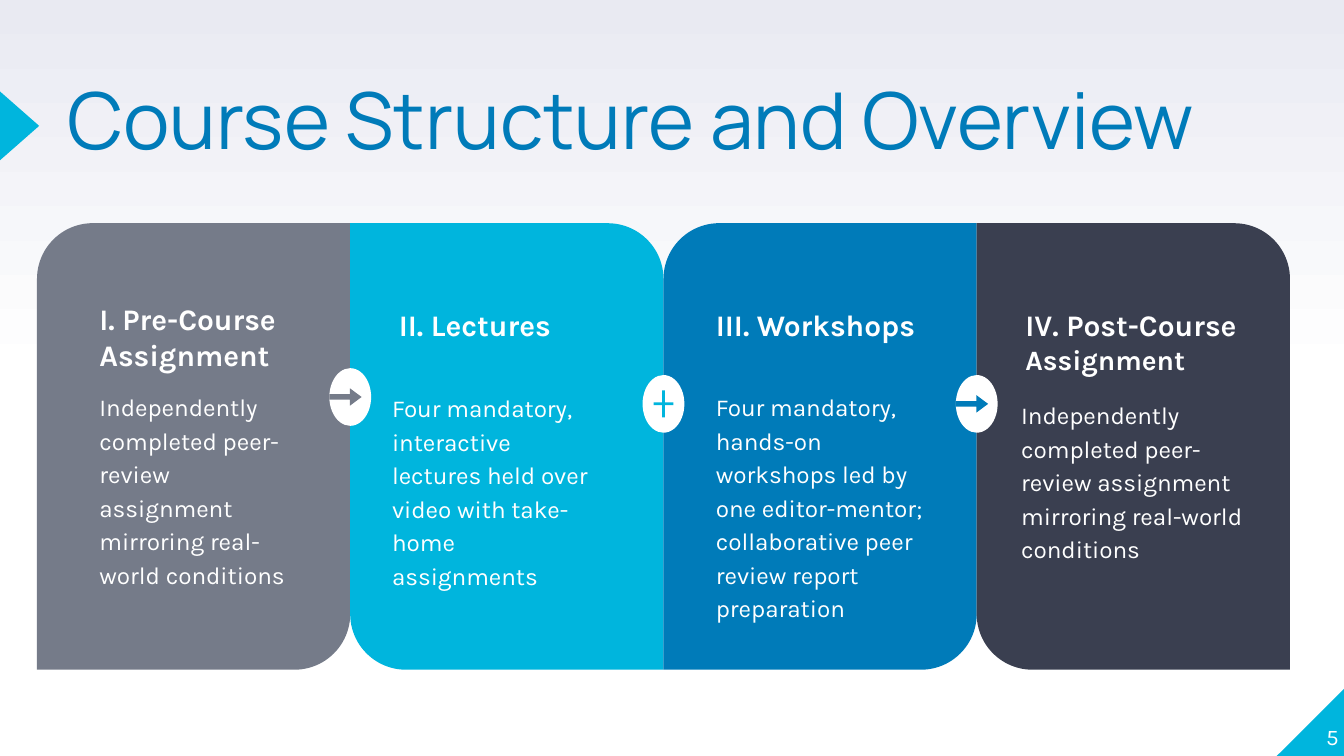
from dataclasses import dataclass

from pptx import Presentation
from pptx.dml.color import RGBColor
from pptx.enum.shapes import MSO_SHAPE
from pptx.enum.text import MSO_ANCHOR, PP_ALIGN
from pptx.util import Cm, Pt

PANEL = MSO_SHAPE.ROUND_2_DIAG_RECTANGLE
OVAL = MSO_SHAPE.OVAL
ARROW = MSO_SHAPE.RIGHT_ARROW
PLUS = MSO_SHAPE.MATH_PLUS
TRIANGLE = MSO_SHAPE.ISOSCELES_TRIANGLE
CORNER = MSO_SHAPE.RIGHT_TRIANGLE
TOP, BOTTOM = MSO_ANCHOR.TOP, MSO_ANCHOR.BOTTOM
LEFT, RIGHT = PP_ALIGN.LEFT, PP_ALIGN.RIGHT


@dataclass(frozen=True)
class Theme:
    title_font: str = "Manrope"
    text_font: str = "Karla"
    white: str = "FFFFFF"
    haze: str = "E9EAF2"
    grey: str = "757B89"
    cyan: str = "00B5DD"
    blue: str = "007BB9"
    dark: str = "3A3F50"
    title: int = 42
    heading: int = 16
    heading_small: int = 15
    body: int = 13
    number: int = 12


T = Theme()

PANEL_LEFT, PANEL_TOP, PANEL_W, PANEL_H = 0.7, 4.22, 5.92, 8.44
ROUND = 0.178
BADGE_W, BADGE_H = 0.79, 1.09
INSET = 0.25

# colour, text width, heading (left, top, runs), body (left, top, text)
PANELS = [
    (T.grey, 4.42,
     (1.63, 5.44, [("I. Pre-Course Assignment", T.heading)]),
     (1.63, 7.09, "Independently completed peer-review assignment "
                  "mirroring real-world conditions")),
    (T.cyan, 4.42,
     (7.29, 5.54, [("II. Lectures", T.heading)]),
     (7.16, 7.11, "Four mandatory, interactive lectures held over "
                  "video with take-home assignments")),
    (T.blue, 4.42,
     (13.28, 5.54, [("III. Workshops", T.heading)]),
     (13.28, 7.09, "Four mandatory, hands-on workshops led by one editor-mentor; "
                   "collaborative peer review report preparation")),
    (T.dark, 4.78,
     (19.13, 5.54, [("IV. Post-Course", T.heading), (" Assignment", T.heading_small)]),
     (19.05, 7.24, "Independently completed peer-review assignment "
                   "mirroring real-world conditions")),
]

# top, symbol, symbol colour, for each joint between two panels
BADGES = [(6.96, ARROW, T.grey), (7.09, PLUS, T.cyan), (7.09, ARROW, T.blue)]


def rgb(color):
    return RGBColor.from_string(color)


def add_shape(s, kind, x, y, w, h, color, adj=(), rotation=0):
    sp = s.shapes.add_shape(kind, Cm(x), Cm(y), Cm(w), Cm(h))
    sp.shadow.inherit = False
    sp.fill.solid()
    sp.fill.fore_color.rgb = rgb(color)
    sp.line.fill.background()
    sp.rotation = rotation
    for i, value in enumerate(adj):
        sp.adjustments[i] = value


def add_text(s, runs, x, y, w, h, font=T.text_font, color=T.white, bold=False,
             inset=0, anchor=TOP, align=LEFT, spacing=None, after=0):
    """Add one paragraph made of (text, size) runs."""
    tf = s.shapes.add_textbox(Cm(x), Cm(y), Cm(w), Cm(h)).text_frame
    tf.word_wrap = True
    tf.vertical_anchor = anchor
    tf.margin_left = tf.margin_right = tf.margin_top = tf.margin_bottom = Cm(inset)
    p = tf.paragraphs[0]
    p.alignment = align
    p.line_spacing = spacing
    p.space_after = Pt(after)
    for text, size in runs:
        r = p.add_run()
        r.text = text
        r.font.name = font
        r.font.size = Pt(size)
        r.font.bold = bold
        r.font.color.rgb = rgb(color)


def set_background(s):
    """White lower half, fading to haze at the top edge."""
    fill = s.background.fill
    fill.gradient()
    fill.gradient_angle = 90
    for stop, color, position in zip(fill.gradient_stops, (T.white, T.haze), (0.5, 1)):
        stop.color.rgb = rgb(color)
        stop.position = position


def add_panel(s, i, color, width, heading, body):
    adj = (0, ROUND) if i % 2 else (ROUND, 0)
    add_shape(s, PANEL, PANEL_LEFT + i * PANEL_W, PANEL_TOP, PANEL_W, PANEL_H, color, adj)
    x, y, runs = heading
    add_text(s, runs, x, y, width, 2.46, bold=True, inset=INSET)
    x, y, text = body
    add_text(s, [(text, T.body)], x, y, width, 3.8, inset=INSET, spacing=1.15, after=16)


def add_badge(s, joint, y, symbol, color):
    x = PANEL_LEFT + joint * PANEL_W - BADGE_W / 2
    add_shape(s, OVAL, x, y, BADGE_W, BADGE_H, T.white)
    if symbol == ARROW:
        w, h, dx, adj = 0.61, 0.33, 0, (0.32, 0.67)
    else:
        w, h, adj = 0.51, 0.69, (0.1,)
        dx = (BADGE_W - w) / 2
    add_shape(s, symbol, x + dx, y + (BADGE_H - h) / 2, w, h, color, adj)


def main():
    prs = Presentation()
    prs.slide_width, prs.slide_height = Cm(25.4), Cm(14.29)
    s = prs.slides.add_slide(prs.slide_layouts[6])
    set_background(s)
    add_shape(s, CORNER, 24.13, 12.99, 1.3, 1.3, T.cyan, rotation=270)
    add_shape(s, TRIANGLE, -0.28, 2.01, 1.3, 0.74, T.cyan, rotation=90)
    add_text(s, [("Course Structure and Overview", T.title)], 1.27, 1.68, 23.11, 3,
             font=T.title_font, color=T.blue, spacing=0.8)
    add_text(s, [("5", T.number)], 24.03, 12.88, 1.27, 1.3, anchor=BOTTOM, align=RIGHT)
    for i, panel in enumerate(PANELS):
        add_panel(s, i, *panel)
    for joint, badge in enumerate(BADGES, start=1):
        add_badge(s, joint, *badge)
    prs.save("out.pptx")


if __name__ == "__main__":
    main()
